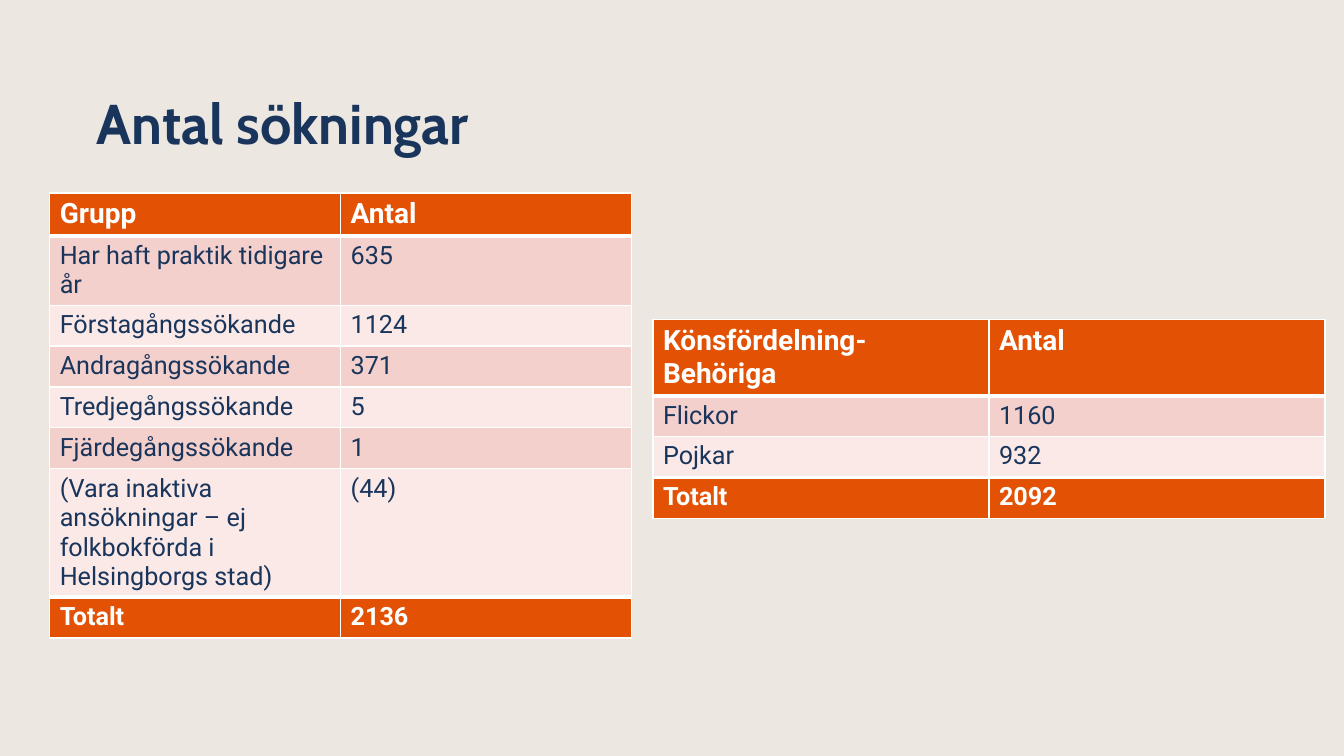
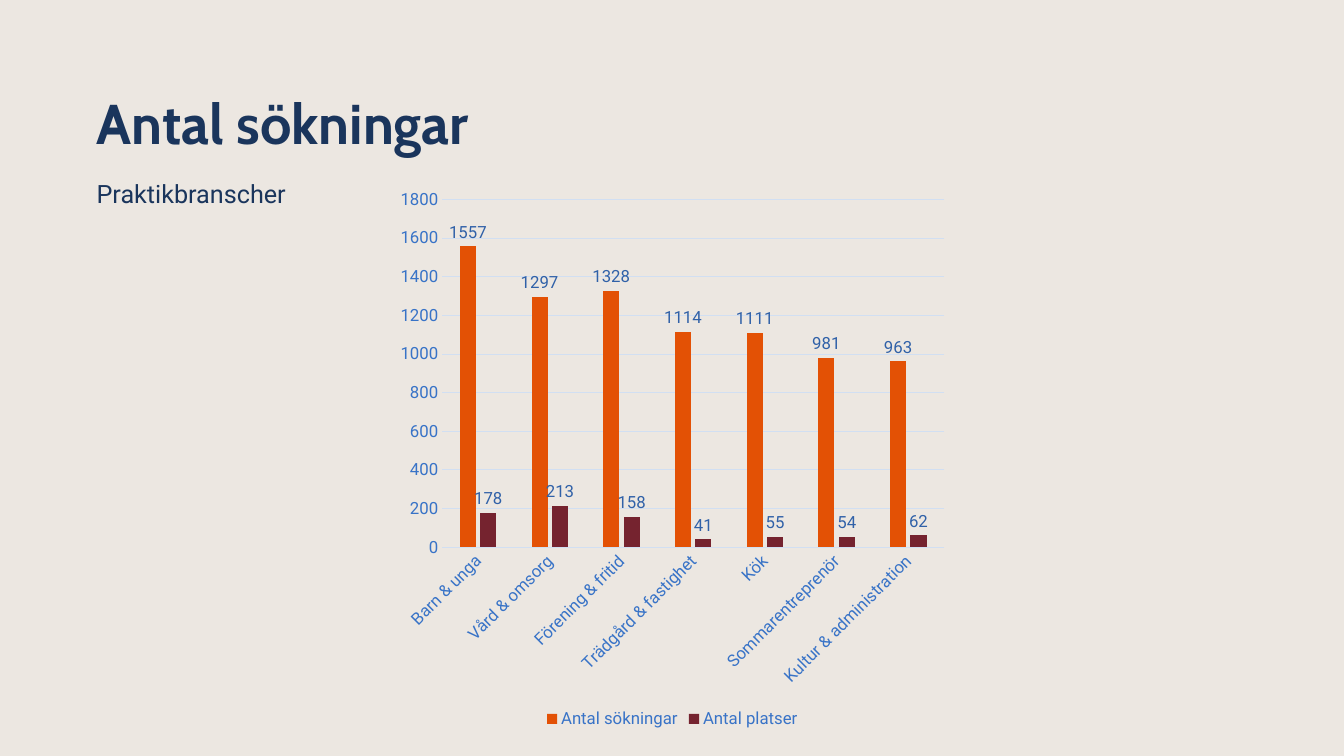
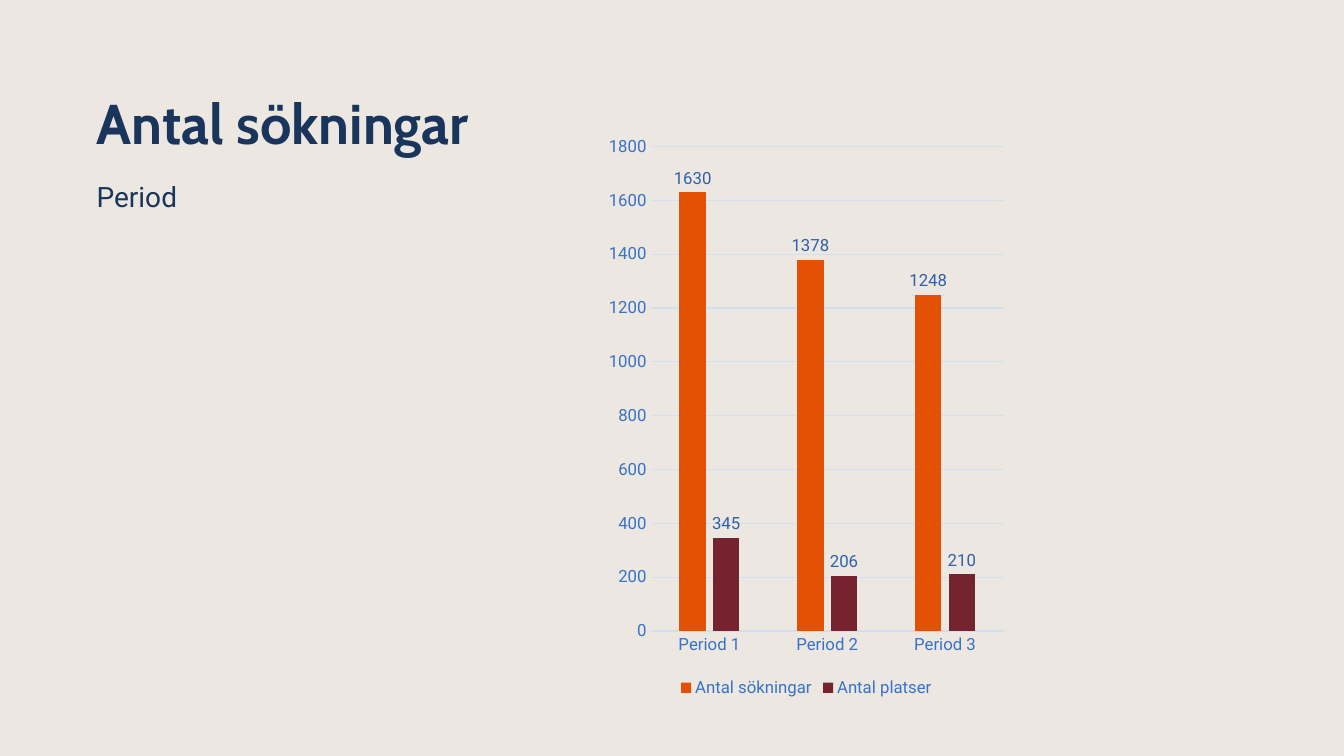
"""Builds three slides on the number of applications."""
from dataclasses import dataclass

from lxml import etree
from pptx import Presentation
from pptx.chart.data import CategoryChartData
from pptx.dml.color import RGBColor
from pptx.enum import chart as ch, text as tx
from pptx.oxml import ns
from pptx.util import Pt


@dataclass(frozen=True)
class Theme:
    """Colours, fonts and type sizes of the deck."""
    page: str = "ECE7E1"
    navy: str = "1A355C"
    white: str = "FEFFFF"
    rust: str = "E35105"
    wine: str = "75232F"
    bands: tuple = ("F4D0CC", "FAE9E7")
    axis: str = "3873C7"
    value: str = "3061A8"
    grid: str = "D1DFF2"
    head: str = "Cabin"
    body: str = "Roboto"
    title: int = 40
    large: int = 20
    text: int = 18
    small: int = 12


T = Theme()


def rgb(code):
    """Return a colour from its hex code."""
    return RGBColor.from_string(code)


def style(font, size, color, name=T.body, bold=False):
    """Set size, colour, face and weight of a font."""
    font.size, font.name, font.bold = Pt(size), name, bold
    font.color.rgb = rgb(color)


def fill(part, color):
    """Give a part a solid fill."""
    part.fill.solid()
    part.fill.fore_color.rgb = rgb(color)


def place(shape, box):
    """Move a shape to a box in points."""
    shape.left, shape.top, shape.width, shape.height = map(Pt, box)


def write(shape, words, top=0):
    """Put words in a shape without side margins and return the paragraph."""
    frame = shape.text_frame
    frame.word_wrap = True
    frame.vertical_anchor = tx.MSO_ANCHOR.TOP
    frame.margin_left = frame.margin_right = frame.margin_bottom = 0
    frame.margin_top = Pt(top)
    frame.text = words
    para = frame.paragraphs[0]
    para.alignment = tx.PP_ALIGN.LEFT
    return para


def start(deck):
    """Add a slide with its title."""
    slide = deck.slides.add_slide(deck.slide_layouts[5])
    place(slide.shapes.title, (69, 68.5, 348, 44))
    para = write(slide.shapes.title, "Antal sökningar")
    para.line_spacing = 0.9
    style(para.font, T.title, T.navy, T.head, True)
    return slide


def note(slide, words, box, size):
    """Add the line below the title."""
    shape = slide.shapes.add_textbox(*map(Pt, box))
    para = write(shape, words, 22)
    para.space_after = Pt(12)
    style(para.font, size, T.navy)


def border(cell, widths):
    """Draw the four cell borders in white."""
    props = cell._tc.get_or_add_tcPr()
    for side, width in zip("LRTB", widths):
        line = etree.SubElement(props, ns.qn("a:ln" + side), w=str(Pt(width)))
        solid = etree.SubElement(line, ns.qn("a:solidFill"))
        etree.SubElement(solid, ns.qn("a:srgbClr"), val=T.white)


def table(slide, rows, box):
    """Add a banded table with a header and a total row."""
    last = len(rows) - 1
    grid = slide.shapes.add_table(len(rows), len(rows[0]), *map(Pt, box)).table
    for r, row in enumerate(rows):
        strong = r in (0, last)
        for c, words in enumerate(row):
            cell = grid.cell(r, c)
            cell.text = words
            style(cell.text_frame.paragraphs[0].font,
                  T.text if r else T.large,
                  T.white if strong else T.navy, bold=strong)
            border(cell, (1, 1, 3 if r in (1, last) else 1,
                          3 if r in (0, last - 1) else 1))
            fill(cell, T.rust if strong else T.bands[(r - 1) % 2])


def chart(slide, names, asked, spots, box, turn=0):
    """Add a column chart of applications and places."""
    data = CategoryChartData()
    data.categories = names
    data.add_series("Antal sökningar", asked)
    data.add_series("Antal platser", spots)
    plan = slide.shapes.add_chart(
        ch.XL_CHART_TYPE.COLUMN_CLUSTERED, *map(Pt, box), data).chart
    plan.has_title = False
    plan.has_legend = True
    plan.legend.position = ch.XL_LEGEND_POSITION.BOTTOM
    plan.legend.include_in_layout = False
    cat, val = plan.category_axis, plan.value_axis
    style(plan.font, T.small, T.axis)
    for part in (plan.legend, cat.tick_labels, val.tick_labels):
        style(part.font, T.small, T.axis)
    for axis in (cat, val):
        axis.major_tick_mark = axis.minor_tick_mark = ch.XL_TICK_MARK.NONE
    cat._element.find(ns.qn("c:txPr")).find(ns.qn("a:bodyPr")).set(
        "rot", str(turn * 60000))
    val.minimum_scale, val.maximum_scale, val.major_unit = 0, 1800, 200
    val.format.line.fill.background()
    for line in (cat.format.line, val.major_gridlines.format.line):
        line.color.rgb = rgb(T.grid)
        line.width = Pt(0.75)
    plot = plan.plots[0]
    plot.gap_width, plot.overlap, plot.vary_by_categories = 219, -27, False
    for series, color in zip(plot.series, (T.rust, T.wine)):
        fill(series.format, color)
        labels = series.data_labels
        labels.show_value = True
        labels.position = ch.XL_LABEL_POSITION.OUTSIDE_END
        style(labels.font, T.small, T.value)


def groups(deck):
    """Build the slide with the two tables."""
    slide = start(deck)
    table(slide, (
        ("Grupp", "Antal"),
        ("Har haft praktik tidigare år", "635"),
        ("Förstagångssökande", "1124"),
        ("Andragångssökande", "371"),
        ("Tredjegångssökande", "5"),
        ("Fjärdegångssökande", "1"),
        ("(Vara inaktiva ansökningar – ej folkbokförda i Helsingborgs stad)",
         "(44)"),
        ("Totalt", "2136")), (35.5, 137.8, 415.6, 233.6))
    table(slide, (
        ("Könsfördelning-Behöriga", "Antal"),
        ("Flickor", "1160"),
        ("Pojkar", "932"),
        ("Totalt", "2092")), (466.4, 228.4, 480, 116.8))


def trades(deck):
    """Build the slide on trades."""
    slide = start(deck)
    chart(slide, ("Barn & unga", "Vård & omsorg", "Förening & fritid",
                  "Trädgård & fastighet", "Kök", "Sommarentreprenör",
                  "Kultur & administration"),
          (1557, 1297, 1328, 1114, 1111, 981, 963),
          (178, 213, 158, 41, 55, 54, 62), (278, 127.5, 404.5, 396), -45)
    note(slide, "Praktikbranscher", (69, 105.3, 348, 44.5), T.text)


def periods(deck):
    """Build the slide on periods."""
    slide = start(deck)
    chart(slide, ("Period 1", "Period 2", "Period 3"),
          (1630, 1378, 1248), (345, 206, 210), (429, 89.3, 294, 412))
    note(slide, "Period", (69, 106.5, 348, 47), T.large)


def main():
    """Build and save the deck."""
    deck = Presentation()
    deck.slide_width, deck.slide_height = Pt(960), Pt(540)
    fill(deck.slide_master.background, T.page)
    for build in (groups, trades, periods):
        build(deck)
    deck.save("out.pptx")


if __name__ == "__main__":
    main()
